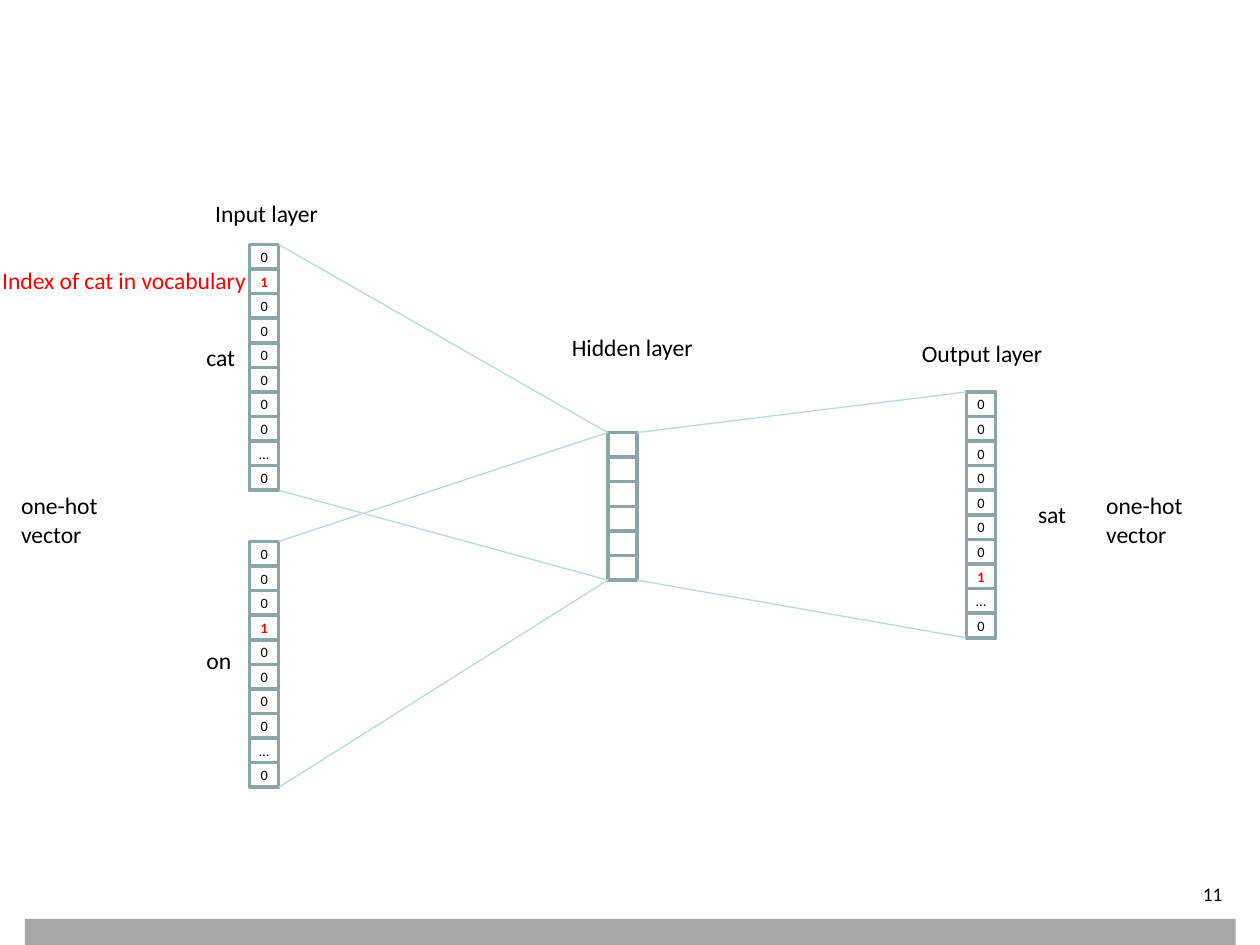
from dataclasses import dataclass
from itertools import product

from lxml.etree import SubElement
from pptx import Presentation
from pptx.dml.color import RGBColor as RGB
from pptx.enum.shapes import MSO_CONNECTOR as CONN, MSO_SHAPE as SHAPE
from pptx.enum.text import MSO_ANCHOR as ANCHOR, MSO_AUTO_SIZE as AUTO, PP_ALIGN as ALIGN
from pptx.oxml.ns import qn
from pptx.util import Pt


@dataclass(frozen=True)
class Theme:
    font: str = "Calibri"
    ink: RGB = RGB(0, 0, 0)
    hot: RGB = RGB(0xFF, 0, 0)
    cell_line: RGB = RGB(0x8A, 0xA6, 0xA8)
    link: RGB = RGB(0xB6, 0xDC, 0xDF)
    bar: RGB = RGB(0xA6, 0xA6, 0xA6)
    label_size: float = 13.5
    cell_size: float = 8.2
    number_size: float = 11


THEME = Theme()
CELL_W, CELL_H = 16.7, 14.05


@dataclass(frozen=True)
class Vector:
    """A column of cells; an empty string is a cell without text."""
    left: float
    top: float
    values: tuple[str, ...]

    @property
    def right(self) -> float:
        return self.left + CELL_W

    @property
    def edges(self) -> tuple[float, float]:
        return self.top, self.top + CELL_H * len(self.values)


@dataclass(frozen=True)
class Label:
    text: str
    left: float
    top: float
    width: float
    height: float = 23.8
    color: RGB = THEME.ink


def one_hot(index: int, size: int = 10) -> tuple[str, ...]:
    values = ["0"] * size
    values[index] = "1"
    values[-2] = "…"
    return tuple(values)


CAT = Vector(142.6, 139.7, one_hot(1))
ON = Vector(142.6, 309.4, one_hot(3))
HIDDEN = Vector(347.3, 247.2, ("",) * 6)
SAT = Vector(552.2, 224, one_hot(7))

LABELS = (
    Label("cat", 110.9, 192.2, 31),
    Label("on", 110.9, 365.8, 28.8),
    Label("sat", 586.1, 282.2, 31),
    Label("Input layer", 115.9, 110.2, 74.2),
    Label("Hidden layer", 319.7, 186.5, 85),
    Label("Output layer", 519.8, 190.1, 84.2),
    Label("one-hot\nvector", 5, 277.2, 59, 40.3),
    Label("one-hot\nvector", 625, 277.2, 59, 40.3),
    Label("Index of cat in vocabulary", -5.8, 148.3, 156.2, color=THEME.hot),
)


def set_text(tf, text: str, size: float, color: RGB, bold: bool = False, align=ALIGN.LEFT) -> None:
    tf.text = text
    for p in tf.paragraphs:
        p.alignment = align
        for r in p.runs:
            for name, value in {"name": THEME.font, "size": Pt(size), "bold": bold}.items():
                setattr(r.font, name, value)
            r.font.color.rgb = color


def set_frame(tf, **attrs) -> None:
    for name, value in attrs.items():
        setattr(tf, name, value)


def draw_vector(s, vector: Vector) -> None:
    group = s.shapes.add_group_shape()
    for row, value in enumerate(vector.values):
        cell = group.shapes.add_shape(SHAPE.RECTANGLE, Pt(vector.left), Pt(vector.top + row * CELL_H),
                                      Pt(CELL_W), Pt(CELL_H))
        cell.shadow.inherit = False
        cell.fill.background()
        cell.line.color.rgb = THEME.cell_line
        cell.line.width = Pt(2)
        if value:
            is_hot = value == "1"
            set_frame(cell.text_frame, word_wrap=False, vertical_anchor=ANCHOR.MIDDLE,
                      margin_left=0, margin_top=0, margin_right=0, margin_bottom=0)
            set_text(cell.text_frame, value, THEME.cell_size, THEME.hot if is_hot else THEME.ink,
                     is_hot, ALIGN.CENTER)


def draw_links(s, source: Vector, target: Vector) -> None:
    """Join the facing top corners and the facing bottom corners."""
    for y1, y2 in zip(source.edges, target.edges):
        line = s.shapes.add_connector(CONN.STRAIGHT, Pt(source.right), Pt(y1), Pt(target.left), Pt(y2))
        line.line.color.rgb = THEME.link
        line.line.width = Pt(0.75)
        SubElement(line._element.spPr, qn("a:effectLst"))


def draw_label(s, label: Label) -> None:
    box = s.shapes.add_textbox(Pt(label.left), Pt(label.top), Pt(label.width), Pt(label.height))
    set_frame(box.text_frame, word_wrap=False, auto_size=AUTO.SHAPE_TO_FIT_TEXT)
    set_text(box.text_frame, label.text, THEME.label_size, label.color)


def draw_footer(s, number: str) -> None:
    bar = s.shapes.add_shape(SHAPE.RECTANGLE, Pt(14.2), Pt(525), Pt(692), Pt(15))
    bar.shadow.inherit = False
    bar.fill.solid()
    bar.fill.fore_color.rgb = THEME.bar
    bar.line.fill.background()
    box = s.shapes.add_textbox(Pt(626.4), Pt(504), Pt(79.2), Pt(15.8))
    set_frame(box.text_frame, word_wrap=True, margin_left=0, margin_top=0, margin_bottom=0)
    set_text(box.text_frame, number, THEME.number_size, THEME.ink, align=ALIGN.RIGHT)


def main() -> None:
    prs = Presentation()
    prs.slide_width, prs.slide_height = Pt(720), Pt(540)
    s = prs.slides.add_slide(prs.slide_layouts[6])
    draw_footer(s, "11")
    for vector in (CAT, ON, HIDDEN, SAT):
        draw_vector(s, vector)
    for source, target in (*product((CAT, ON), (HIDDEN,)), (HIDDEN, SAT)):
        draw_links(s, source, target)
    for label in LABELS:
        draw_label(s, label)
    prs.save("out.pptx")


if __name__ == "__main__":
    main()
